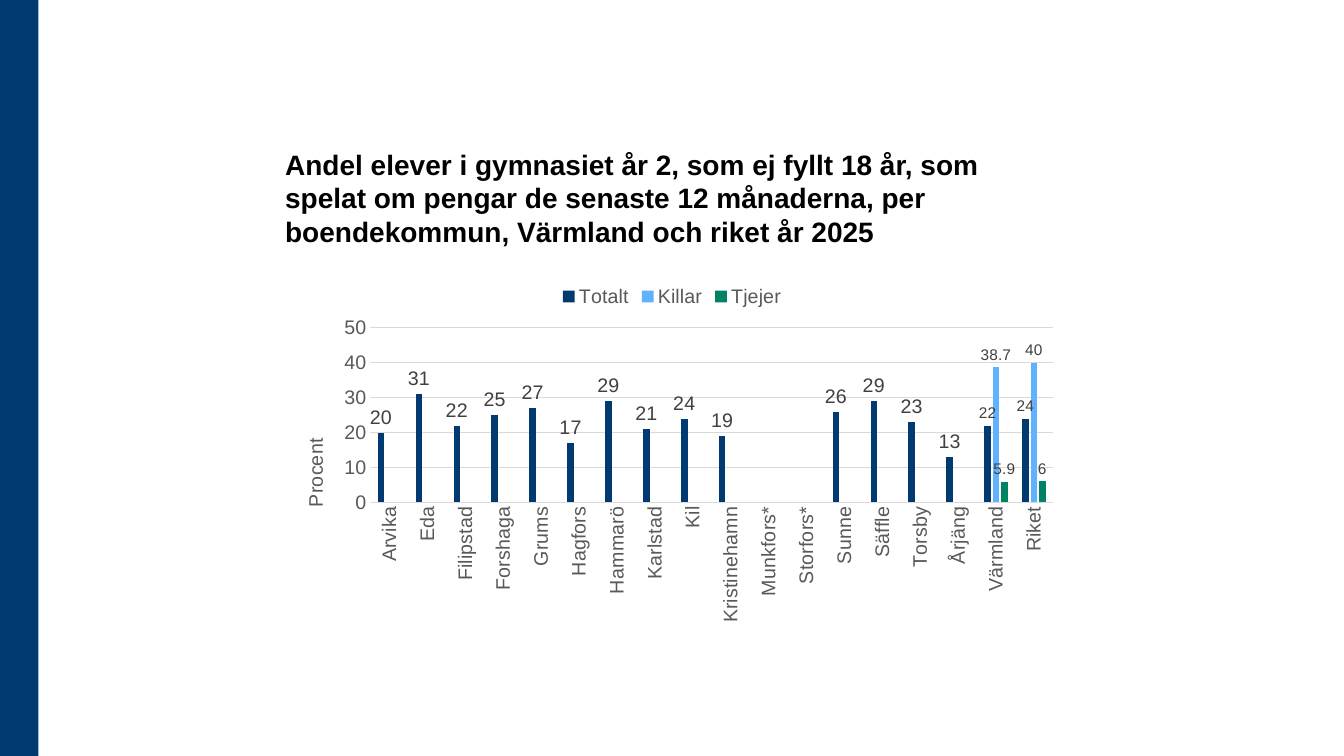
from dataclasses import dataclass

from lxml import etree
from pptx import Presentation
from pptx.chart.data import CategoryChartData
from pptx.dml.color import RGBColor
from pptx.enum.chart import (XL_CHART_TYPE, XL_LABEL_POSITION,
                             XL_LEGEND_POSITION, XL_TICK_MARK)
from pptx.enum.shapes import MSO_SHAPE
from pptx.enum.text import MSO_ANCHOR
from pptx.oxml.ns import qn
from pptx.util import Inches, Pt

COLUMN = XL_CHART_TYPE.COLUMN_CLUSTERED
OUTSIDE = XL_LABEL_POSITION.OUTSIDE_END
TOP = XL_LEGEND_POSITION.TOP
NO_TICK = XL_TICK_MARK.NONE
RECT = MSO_SHAPE.RECTANGLE
BOTTOM = MSO_ANCHOR.BOTTOM

FACE = "Arial"
COLORS = {"navy": "003A70", "sky": "60B2FF", "green": "008264",
          "black": "000000", "label": "404040", "axis": "595959",
          "grid": "D9D9D9"}
TITLE = ("Andel elever i gymnasiet år 2, som ej fyllt 18 år, som spelat om "
         "pengar de senaste 12 månaderna, per boendekommun, Värmland och "
         "riket år 2025")
TOWNS = ["Arvika", "Eda", "Filipstad", "Forshaga", "Grums", "Hagfors",
         "Hammarö", "Karlstad", "Kil", "Kristinehamn", "Munkfors*",
         "Storfors*", "Sunne", "Säffle", "Torsby", "Årjäng"]
AREAS = ["Värmland", "Riket"]
BLANK = [None] * len(TOWNS)


@dataclass
class Group:
    name: str
    color: str
    values: list
    size: int


GROUPS = [
    Group("Totalt", "navy", [20, 31, 22, 25, 27, 17, 29, 21, 24, 19, None,
                             None, 26, 29, 23, 13, 22, 24], 14),
    Group("Killar", "sky", BLANK + [38.7, 40], 11),
    Group("Tjejer", "green", BLANK + [5.9, 6], 11),
]


def rgb(name: str) -> RGBColor:
    return RGBColor.from_string(COLORS[name])


def style(font, size: float, color: str, bold: bool = False) -> None:
    font.name = FACE
    font.size = Pt(size)
    font.bold = bold
    font.color.rgb = rgb(color)


def write(frame, text: str, *, size: float, color: str,
          bold: bool = False) -> None:
    frame.text = text
    for para in frame.paragraphs:
        for run in para.runs:
            style(run.font, size, color, bold)


def place(node, **parts) -> None:
    """Give a chart part a manual layout, in fractions of the chart."""
    for old in node.findall(qn("c:layout")):
        node.remove(old)
    layout = etree.Element(qn("c:layout"))
    manual = etree.SubElement(layout, qn("c:manualLayout"))
    for key, value in parts.items():
        etree.SubElement(manual, qn(f"c:{key}")).set("val", str(value))
    text = node.find(qn("c:tx"))
    if text is None:
        node.insert(0, layout)
    else:
        text.addnext(layout)


def add_band(slide, height: int) -> None:
    band = slide.shapes.add_shape(RECT, 0, 0, Inches(0.38), height)
    band.shadow.inherit = False
    band.fill.solid()
    band.fill.fore_color.rgb = rgb("navy")
    band.line.fill.background()


def add_title(slide) -> None:
    box = slide.shapes.add_textbox(Inches(2.73), Inches(1.06),
                                   Inches(7.87), Inches(1.45))
    frame = box.text_frame
    frame.word_wrap = True
    frame.vertical_anchor = BOTTOM
    write(frame, TITLE, size=20, color="black", bold=True)


def style_axes(chart) -> None:
    for axis in (chart.category_axis, chart.value_axis):
        axis.major_tick_mark = axis.minor_tick_mark = NO_TICK
        style(axis.tick_labels.font, 14, "axis")

    towns = chart.category_axis
    towns.format.line.color.rgb = rgb("grid")
    towns.format.line.width = Pt(0.75)
    props = towns.tick_labels.font._element.getparent().getparent()
    body = props.getparent().find(qn("a:bodyPr"))
    body.set("rot", "-5400000")
    body.set("vert", "horz")

    share = chart.value_axis
    share.minimum_scale, share.maximum_scale, share.major_unit = 0, 50, 10
    share.tick_labels.number_format = "0"
    share.tick_labels.number_format_is_linked = False
    share.format.line.fill.background()
    grid = share.major_gridlines.format.line
    grid.color.rgb = rgb("grid")
    grid.width = Pt(0.75)
    title = share.axis_title
    write(title.text_frame, "Procent", size=14, color="axis")
    body = title.text_frame._txBody.find(qn("a:bodyPr"))
    body.set("rot", "-5400000")
    body.set("vert", "horz")
    place(title._element, xMode="edge", yMode="edge", x=0.03, y=0.45)


def style_group(series, group: Group) -> None:
    series.format.fill.solid()
    series.format.fill.fore_color.rgb = rgb(group.color)
    series.invert_if_negative = False
    labels = series.data_labels
    labels.show_value = True
    labels.position = OUTSIDE
    style(labels.font, group.size, "label")
    if group.size > 11:
        labels.number_format = "0"
        labels.number_format_is_linked = False
        for index in range(len(TOWNS), len(TOWNS + AREAS)):
            label = series.points[index].data_label
            style(label.font, 11, "label")
            label.position = OUTSIDE


def add_graph(slide) -> None:
    data = CategoryChartData()
    data.categories = TOWNS + AREAS
    for group in GROUPS:
        data.add_series(group.name, group.values)
    chart = slide.shapes.add_chart(COLUMN, Inches(2.73), Inches(2.72),
                                   Inches(7.87), Inches(3.54), data).chart
    style(chart.font, 14, "black")
    chart.has_title = False
    chart.has_legend = True
    chart.legend.position = TOP
    chart.legend.include_in_layout = False
    style(chart.legend.font, 14, "axis")
    style_axes(chart)

    plot = chart.plots[0]
    plot.vary_by_categories = False
    plot.gap_width, plot.overlap = 219, -27
    for series, group in zip(plot.series, GROUPS):
        style_group(series, group)
    area = chart._chartSpace.chart.plotArea
    place(area, layoutTarget="inner", xMode="edge", yMode="edge",
          x=0.12, y=0.15, w=0.86, h=0.49)


def main() -> None:
    deck = Presentation()
    deck.slide_width, deck.slide_height = Inches(13.33), Inches(7.5)
    slide = deck.slides.add_slide(deck.slide_layouts[6])
    add_band(slide, deck.slide_height)
    add_title(slide)
    add_graph(slide)
    deck.save("out.pptx")


if __name__ == "__main__":
    main()
